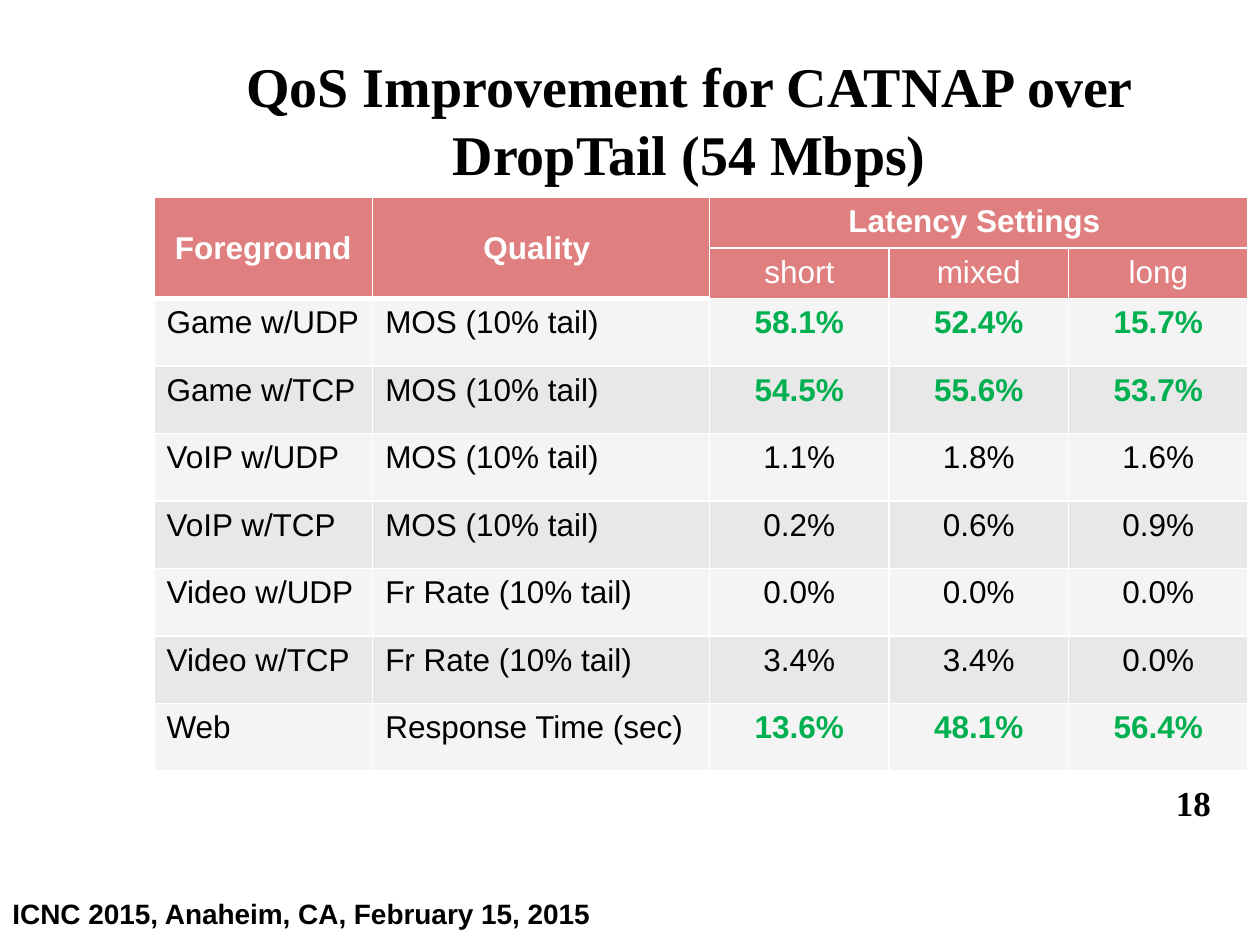
"""Build the slide with the table of QoS gains by latency setting."""
from lxml.etree import SubElement
from pptx import Presentation
from pptx.dml.color import RGBColor
from pptx.enum.text import MSO_ANCHOR, PP_ALIGN
from pptx.oxml.ns import qn
from pptx.util import Pt

HUES = {"ink": "000000", "paper": "FFFFFF", "head": "DF7F7F",
        "light": "F4F4F4", "dark": "E8E8E8", "gain": "00B050"}


def write(frame, text, hue, align, **form):
    para = frame.paragraphs[0]
    para.alignment = align
    run = para.add_run()
    run.text = text
    for key, value in form.items():
        setattr(run.font, key, value)
    run.font.color.rgb = RGBColor.from_string(HUES[hue])


def edge(cell, side, width):
    line = SubElement(cell._tc.get_or_add_tcPr(), qn(f"a:ln{side}"), w=str(Pt(width)))
    fill = SubElement(line, qn("a:solidFill"))
    SubElement(fill, qn("a:srgbClr"), val=HUES["paper"])


deck = Presentation()
deck.slide_width, deck.slide_height = Pt(720), Pt(540)
slide = deck.slides.add_slide(deck.slide_layouts[6])

serif, sans = "Times New Roman", "Arial"
left, mid, right = PP_ALIGN.LEFT, PP_ALIGN.CENTER, PP_ALIGN.RIGHT
labels = [
    ("18", (628.5, 443, 70.5, 37.5), right, MSO_ANCHOR.TOP, serif, 20),
    ("ICNC 2015, Anaheim, CA, February 15, 2015", (0, 508.5, 400, 32),
     left, MSO_ANCHOR.TOP, sans, 16),
    ("QoS Improvement for CATNAP over DropTail (54 Mbps)", (88, 23, 612, 90),
     mid, MSO_ANCHOR.MIDDLE, serif, 32),
]
for text, place, align, anchor, face, size in labels:
    frame = slide.shapes.add_textbox(*map(Pt, place)).text_frame
    frame.word_wrap = True
    frame.vertical_anchor = anchor
    write(frame, text, "ink", align, name=face, size=Pt(size), bold=True)

rows = [
    ("Foreground", "Quality ", "Latency Settings ", "", ""),
    ("", "", "short", "mixed", "long"),
    ("Game w/UDP", "MOS (10% tail)", "58.1%", "52.4%", "15.7%"),
    ("Game w/TCP", "MOS (10% tail)", "54.5%", "55.6%", "53.7%"),
    ("VoIP w/UDP", "MOS (10% tail)", "1.1%", "1.8%", "1.6%"),
    ("VoIP w/TCP", "MOS (10% tail)", "0.2%", "0.6%", "0.9%"),
    ("Video w/UDP", "Fr Rate (10% tail)", "0.0%", "0.0%", "0.0%"),
    ("Video w/TCP", "Fr Rate (10% tail)", "3.4%", "3.4%", "0.0%"),
    ("Web", "Response Time (sec)", "13.6%", "48.1%", "56.4%"),
]
gains = {"Game w/UDP", "Game w/TCP", "Web"}
widths = [125, 192.5, 102.6, 102.6, 102.6]
heights = [27] * 2 + [38.6] * 7
table = slide.shapes.add_table(len(rows), len(widths), Pt(88), Pt(113),
                               Pt(sum(widths)), Pt(sum(heights))).table
table.horz_banding = False
for col, width in zip(table.columns, widths):
    col.width = Pt(width)
for row, height in zip(table.rows, heights):
    row.height = Pt(height)
for col in (0, 1):
    table.cell(0, col).merge(table.cell(1, col))
table.cell(0, 2).merge(table.cell(0, 4))

for r, row in enumerate(rows):
    head = r < 2
    for c, text in enumerate(row):
        cell = table.cell(r, c)
        for side in "LRTB":
            edge(cell, side, 3 if head and c < 2 and side == "B" else 1)
        cell.fill.solid()
        shade = "head" if head else ("light", "dark")[r % 2]
        cell.fill.fore_color.rgb = RGBColor.from_string(HUES[shade])
        if not text:
            continue
        if cell.is_merge_origin and c < 2:
            cell.vertical_anchor = MSO_ANCHOR.MIDDLE
        gain = row[0] in gains and c > 1
        hue = "paper" if head else "gain" if gain else "ink"
        write(cell.text_frame, text, hue, mid if head or c > 1 else left,
              name=sans, size=Pt(18), bold=r == 0 or gain)

deck.save("out.pptx")
